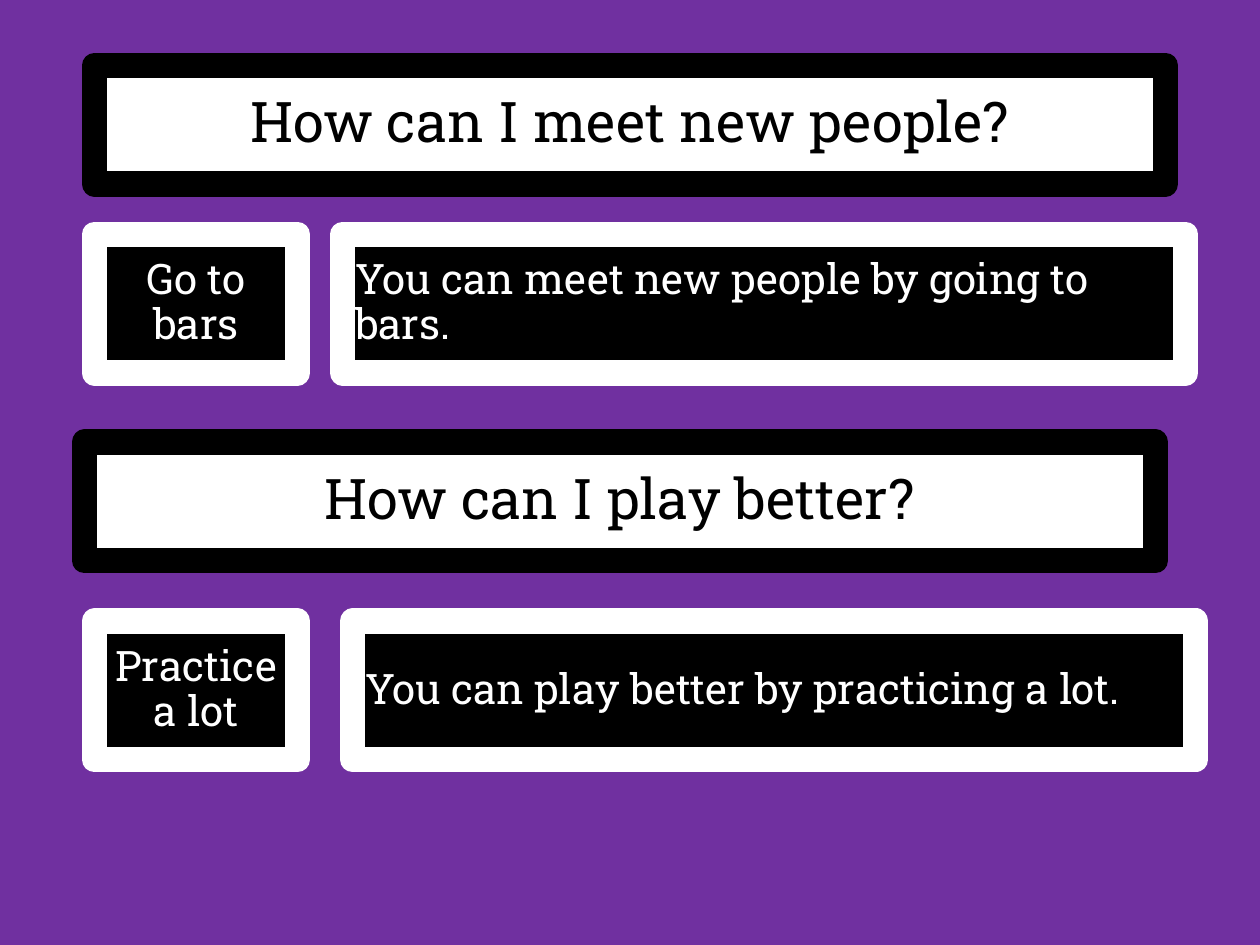
from dataclasses import dataclass

from pptx import Presentation
from pptx import util as u
from pptx.dml.color import RGBColor
from pptx.enum import shapes, text

PURPLE, BLACK, WHITE = "7030A0", "000000", "FFFFFF"


@dataclass
class Panel:
    left: float
    top: float
    width: float
    height: float
    wording: str
    fill: str = BLACK
    ink: str = WHITE
    size: int = 24
    align: text.PP_ALIGN = text.PP_ALIGN.CENTER


@dataclass
class Topic:
    question: str
    question_left: float
    question_top: float
    idea: str
    answer: str
    answer_left: float
    answer_top: float


TOPICS = [
    Topic("How can I meet new people?", 0.75, 0.52,
          "Go to bars", "You can meet new people by going to bars.", 2.72, 1.86),
    Topic("How can I play better?", 0.67, 3.51,
          "Practice a lot", "You can play better by practicing a lot.", 2.8, 4.93),
]


def paint(fill, color: str) -> None:
    fill.solid()
    fill.fore_color.rgb = RGBColor.from_string(color)


def add_panel(page, panel: Panel) -> None:
    box = page.shapes.add_shape(
        shapes.MSO_SHAPE.RECTANGLE,
        u.Inches(panel.left), u.Inches(panel.top),
        u.Inches(panel.width), u.Inches(panel.height))
    box.shadow.inherit = False
    paint(box.fill, panel.fill)
    paint(box.line.fill, panel.ink)
    box.line.width = u.Pt(14.5)
    frame = box.text_frame
    frame.word_wrap = True
    frame.vertical_anchor = text.MSO_ANCHOR.MIDDLE
    para = frame.paragraphs[0]
    para.text = panel.wording
    para.alignment = panel.align
    para.line_spacing = 0.9
    para.font.name = "Roboto Slab"
    para.font.size = u.Pt(panel.size)
    paint(para.font.fill, panel.ink)


def add_topic(page, topic: Topic) -> None:
    add_panel(page, Panel(topic.question_left, topic.question_top, 8.5, 0.94,
                          topic.question, WHITE, BLACK, 32))
    add_panel(page, Panel(0.75, topic.answer_top, 1.61, 1.1, topic.idea))
    add_panel(page, Panel(topic.answer_left, topic.answer_top, 6.69, 1.1,
                          topic.answer, align=text.PP_ALIGN.LEFT))


def main() -> None:
    """Build the slide of questions and answers."""
    deck = Presentation()
    deck.slide_width, deck.slide_height = u.Inches(10), u.Inches(7.5)
    page = deck.slides.add_slide(deck.slide_layouts[6])
    paint(page.background.fill, PURPLE)
    for topic in TOPICS:
        add_topic(page, topic)
    deck.save("out.pptx")


if __name__ == "__main__":
    main()
